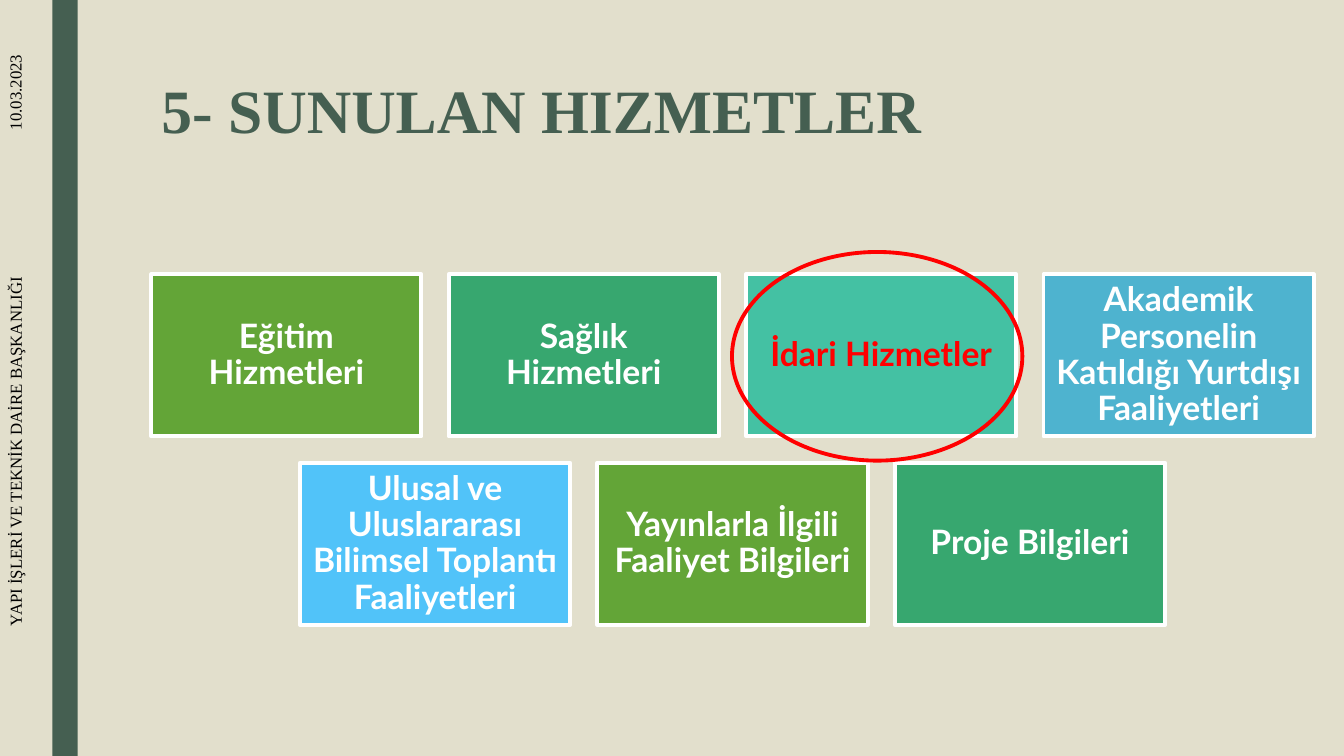
from pptx import Presentation
from pptx.dml.color import RGBColor
from pptx.enum.shapes import MSO_SHAPE
from pptx.enum.text import MSO_ANCHOR, MSO_AUTO_SIZE, PP_ALIGN
from pptx.util import Inches, Pt

RECTANGLE, OVAL = MSO_SHAPE.RECTANGLE, MSO_SHAPE.OVAL
TOP, MIDDLE = MSO_ANCHOR.TOP, MSO_ANCHOR.MIDDLE
LEFT, CENTER = PP_ALIGN.LEFT, PP_ALIGN.CENTER
NO_AUTOFIT = MSO_AUTO_SIZE.NONE

COLORS = {
    "background": "E2DFCC", "dark": "455F51", "black": "000000",
    "white": "FFFFFF", "red": "FF0000", "green": "63A537",
    "emerald": "37A76F", "teal": "44C1A3", "blue": "4EB3CF", "sky": "51C3F9",
}
SERIF, SANS = "Times New Roman", "Lato"

TITLE = "5- SUNULAN HIZMETLER"
SIDE_TEXTS = [  # text, left, top, width, height before rotation
    ("10.03.2023", -0.55, 0.4, 1.54, 0.44),
    ("YAPI İŞLERİ VE TEKNİK DAİRE BAŞKANLIĞI", -2.2, 3.86, 4.65, 0.25),
]
SERVICE_ROWS = [  # text, fill, text color
    [
        ("Eğitim Hizmetleri", "green", "white"),
        ("Sağlık Hizmetleri", "emerald", "white"),
        ("İdari Hizmetler", "teal", "red"),
        ("Akademik Personelin Katıldığı Yurtdışı Faaliyetleri", "blue", "white"),
    ],
    [
        ("Ulusal ve Uluslararası Bilimsel Toplantı Faaliyetleri", "sky", "white"),
        ("Yayınlarla İlgili Faaliyet Bilgileri", "green", "white"),
        ("Proje Bilgileri", "emerald", "white"),
    ],
]
GRID_LEFT, GRID_TOP = 1.5, 2.72
CARD_WIDTH, CARD_HEIGHT = 2.68, 1.61
STEP_X, STEP_Y = 2.95, 1.87


def color(name):
    return RGBColor.from_string(COLORS[name])


def box(left, top, width, height):
    return [Inches(value) for value in (left, top, width, height)]


def write(shape, text, font_name, size, color_name, bold=False,
          alignment=LEFT, anchor=TOP, spacing=1.0):
    frame = shape.text_frame
    frame.auto_size = NO_AUTOFIT
    frame.word_wrap = True
    frame.vertical_anchor = anchor
    paragraph = frame.paragraphs[0]
    paragraph.alignment = alignment
    paragraph.line_spacing = spacing
    paragraph.space_before = Pt(0)
    run = paragraph.add_run()
    run.text = text
    run.font.name = font_name
    run.font.size = Pt(size)
    run.font.bold = bold
    run.font.color.rgb = color(color_name)


def add_shape(slide, kind, place, fill=None, line=None):
    shape = slide.shapes.add_shape(kind, *box(*place))
    shape.shadow.inherit = False
    if fill:
        shape.fill.solid()
        shape.fill.fore_color.rgb = color(fill)
    else:
        shape.fill.background()
    if line:
        shape.line.color.rgb = color(line)
        shape.line.width = Pt(2.75)
    else:
        shape.line.fill.background()
    return shape


def add_card(slide, place, text, fill, text_color):
    card = add_shape(slide, RECTANGLE, place, fill, "white")
    write(card, text, SANS, 24, text_color, True, CENTER, MIDDLE, 0.9)
    frame = card.text_frame
    frame.margin_left = frame.margin_right = Inches(0.1)
    frame.margin_top = frame.margin_bottom = Inches(0.1)


def main():
    presentation = Presentation()
    presentation.slide_width = Inches(13.33)
    presentation.slide_height = Inches(7.5)
    slide = presentation.slides.add_slide(presentation.slide_layouts[5])
    slide.background.fill.solid()
    slide.background.fill.fore_color.rgb = color("background")

    add_shape(slide, RECTANGLE, (0.52, 0, 0.25, 7.5), "dark")
    for text, *place in SIDE_TEXTS:
        label = slide.shapes.add_textbox(*box(*place))
        label.rotation = 270
        write(label, text, SERIF, 12, "black")

    title = slide.shapes.title
    title.left, title.top, title.width, title.height = box(1.5, 0.75, 10.5, 1.62)
    write(title, TITLE, SERIF, 44, "dark", bold=True, spacing=0.89)

    longest = max(len(row) for row in SERVICE_ROWS)
    for row_index, row in enumerate(SERVICE_ROWS):
        row_left = GRID_LEFT + (longest - len(row)) * STEP_X / 2
        top = GRID_TOP + row_index * STEP_Y
        for column, service in enumerate(row):
            left = row_left + column * STEP_X
            add_card(slide, (left, top, CARD_WIDTH, CARD_HEIGHT), *service)

    add_shape(slide, OVAL, (7.26, 2.5, 2.88, 2.07), line="red")
    presentation.save("out.pptx")


if __name__ == "__main__":
    main()
